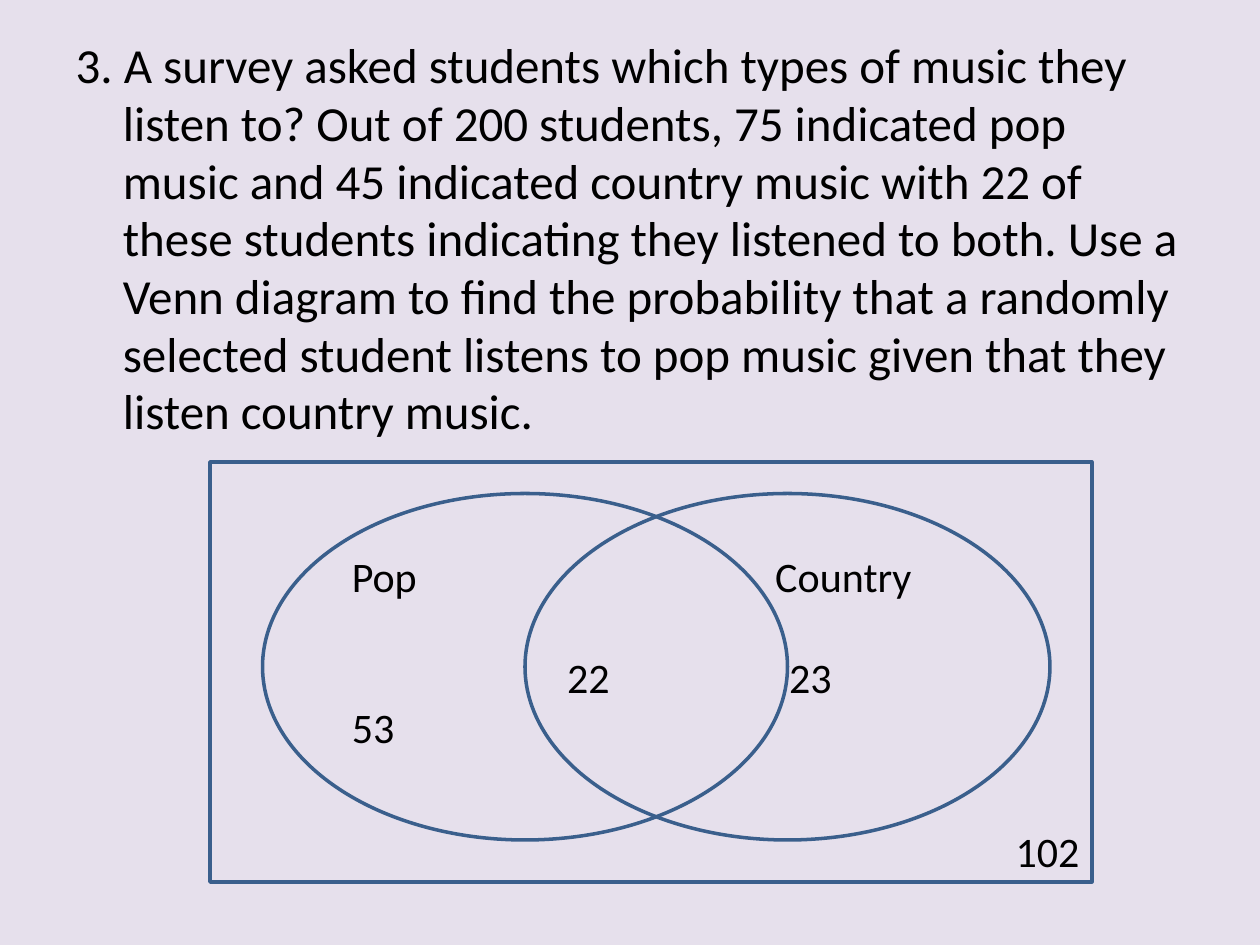
from pptx import Presentation
from pptx.dml.color import RGBColor as RGB
from pptx.enum.shapes import MSO_SHAPE as Shape
from pptx.enum.text import MSO_ANCHOR as Anchor, PP_ALIGN as Align
from pptx.oxml.xmlchemy import OxmlElement as Node
from pptx.util import Pt

QUESTION = (
    "3. A survey asked students which types of music they listen to? "
    "Out of 200 students, 75 indicated pop music and 45 indicated country "
    "music with 22 of these students indicating they listened to both. "
    "Use a Venn diagram to find the probability that a randomly selected "
    "student listens to pop music given that they listen country music."
)


def color(code):
    return RGB.from_string(code)


def indent(para, left, first=0):
    """Set the left margin and first-line indent, in points."""
    props = para._p.get_or_add_pPr()
    props.set("marL", str(Pt(left)))
    props.set("indent", str(Pt(first)))
    return props


class Page:
    font = "Calibri"
    ink = "000000"
    edge = "3A5F8C"
    back = "E6E0EC"

    def __init__(self, deck):
        self.slide = deck.slides.add_slide(deck.slide_layouts[1])
        fill = self.slide.background.fill
        fill.solid()
        fill.fore_color.rgb = color(self.back)
        title = self.slide.shapes.title.element
        title.getparent().remove(title)

    def label(self, para, text, size, **form):
        run = para.add_run()
        run.text = text
        run.font.name = self.font
        run.font.size = Pt(size)
        run.font.color.rgb = color(self.ink)
        for name, value in form.items():
            setattr(para, name, value)

    def body(self, text, left, top, width, height):
        box = self.slide.placeholders[1]
        place = dict(left=left, top=top, width=width, height=height)
        for name, value in place.items():
            setattr(box, name, Pt(value))
        para = box.text_frame.paragraphs[0]
        self.label(para, text, 28, line_spacing=0.98)
        indent(para, 27, -27).append(Node("a:buNone"))

    def outline(self, kind, left, top, width, height, anchor, lines):
        """Draw an unfilled shape; each line is text, left indent, format."""
        area = map(Pt, (left, top, width, height))
        shape = self.slide.shapes.add_shape(kind, *area)
        shape.shadow.inherit = False
        shape.fill.background()
        shape.line.color.rgb = color(self.edge)
        shape.line.width = Pt(2)
        frame = shape.text_frame
        frame.word_wrap = True
        frame.vertical_anchor = anchor
        for row, (text, inset, form) in enumerate(lines):
            para = frame.add_paragraph() if row else frame.paragraphs[0]
            self.label(para, text, 24, **{"alignment": Align.LEFT, **form})
            indent(para, inset)


def main():
    deck = Presentation()
    deck.slide_width, deck.slide_height = Pt(720), Pt(540)
    page = Page(deck)
    page.body(QUESTION, 36, 18, 648, 464.4)

    page.outline(Shape.RECTANGLE, 120, 264, 504, 240, Anchor.BOTTOM,
                 [("102", 0, {"alignment": Align.RIGHT})])
    gap = {"space_before": Pt(29)}
    sets = [
        (150, [("Pop", 0, {}), ("22", 123, gap), ("53", 0, {})]),
        (300, [("Country", 92, {}), ("23", 100, gap)]),
    ]
    for left, lines in sets:
        page.outline(Shape.OVAL, left, 282, 300, 198, Anchor.TOP, lines)
    deck.save("out.pptx")


if __name__ == "__main__":
    main()
